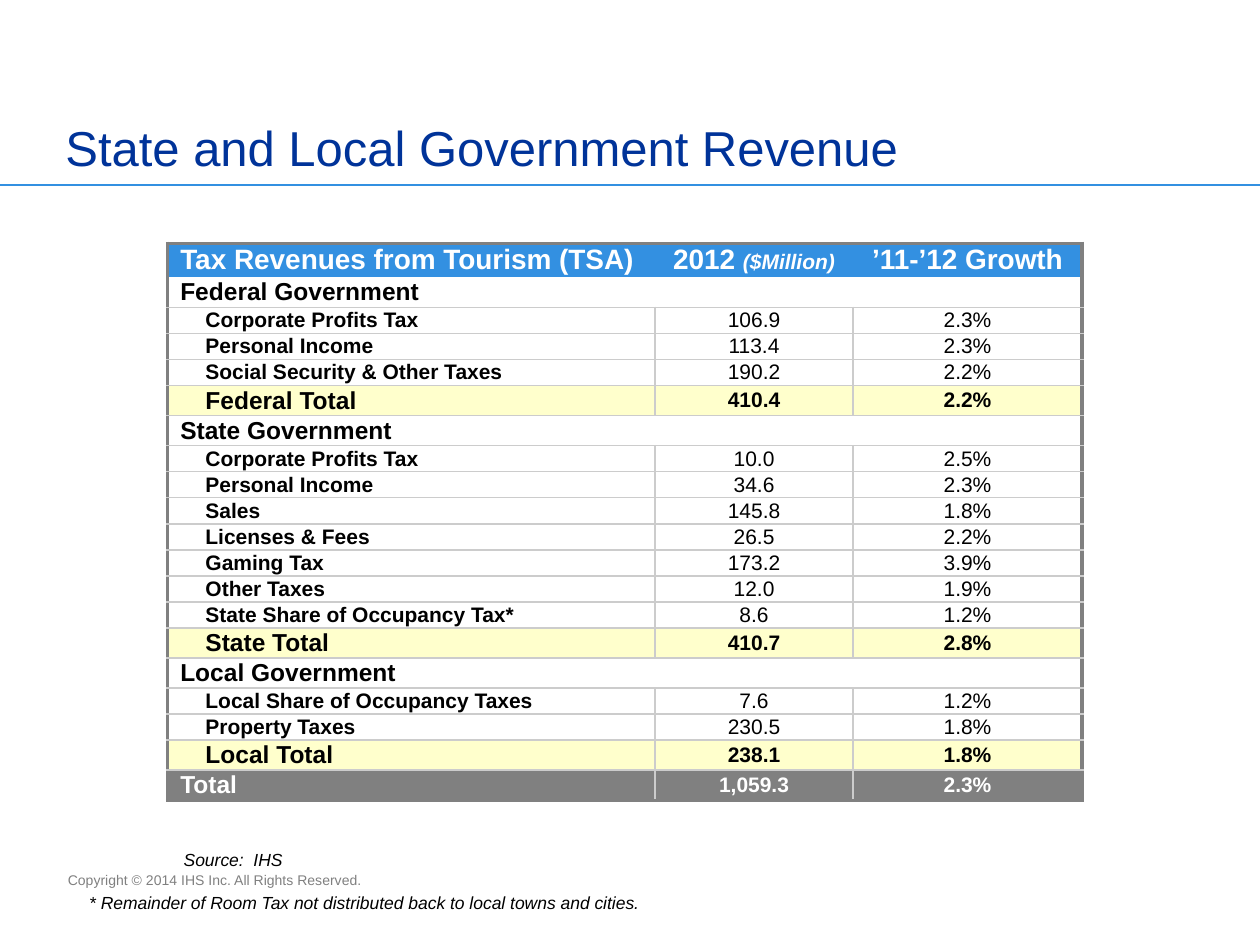
from dataclasses import dataclass

from lxml import etree
from pptx import Presentation
from pptx.dml.color import RGBColor
from pptx.enum.shapes import MSO_CONNECTOR
from pptx.enum.text import MSO_ANCHOR, MSO_AUTO_SIZE, PP_ALIGN
from pptx.oxml.ns import qn
from pptx.util import Pt

STRAIGHT = MSO_CONNECTOR.STRAIGHT
BOTTOM, MIDDLE = MSO_ANCHOR.BOTTOM, MSO_ANCHOR.MIDDLE
LEFT, CENTER = PP_ALIGN.LEFT, PP_ALIGN.CENTER
NO_FIT = MSO_AUTO_SIZE.NONE

FONT = "Arial"
TITLE_ONLY = 5
NO_TABLE_STYLE = "{2D5ABB26-0587-4C30-8999-92F81FD0307C}"
COLORS = {
    "navy": "003399", "blue": "3390E1", "gray": "808080", "light": "CCCCCC",
    "cream": "FFFFCC", "white": "FFFFFF", "black": "000000",
}


@dataclass
class RowStyle:
    height: float
    fill: str
    color: str
    label_size: float
    value_size: float
    indent: float
    bold_values: bool


@dataclass
class Row:
    kind: str
    label: str
    amount: str = ""
    growth: str = ""


@dataclass
class Note:
    text: str
    left: float
    top: float
    width: float
    height: float
    size: float
    color: str
    italic: bool


STYLES = {
    "header": RowStyle(19.5, "blue", "white", 16, 16, 7.2, True),
    "group": RowStyle(17.2, "white", "black", 14, 12, 7.2, False),
    "item": RowStyle(14.9, "white", "black", 12, 12, 21.6, False),
    "subtotal": RowStyle(17.2, "cream", "black", 14, 12, 21.6, True),
    "total": RowStyle(17.2, "gray", "white", 14, 12, 7.2, True),
}

ROWS = [
    Row("header", "Tax Revenues from Tourism (TSA)", "2012 ", "’11-’12 Growth"),
    Row("group", "Federal Government"),
    Row("item", "Corporate Profits Tax", "106.9", "2.3%"),
    Row("item", "Personal Income", "113.4", "2.3%"),
    Row("item", "Social Security & Other Taxes", "190.2", "2.2%"),
    Row("subtotal", "Federal Total", "410.4", "2.2%"),
    Row("group", "State Government"),
    Row("item", "Corporate Profits Tax", "10.0", "2.5%"),
    Row("item", "Personal Income", "34.6", "2.3%"),
    Row("item", "Sales", "145.8", "1.8%"),
    Row("item", "Licenses & Fees", "26.5", "2.2%"),
    Row("item", "Gaming Tax", "173.2", "3.9%"),
    Row("item", "Other Taxes", "12.0", "1.9%"),
    Row("item", "State Share of Occupancy Tax*", "8.6", "1.2%"),
    Row("subtotal", "State Total", "410.7", "2.8%"),
    Row("group", "Local Government"),
    Row("item", "Local Share of Occupancy Taxes", "7.6", "1.2%"),
    Row("item", "Property Taxes", "230.5", "1.8%"),
    Row("subtotal", "Local Total", "238.1", "1.8%"),
    Row("total", "Total", "1,059.3", "2.3%"),
]
COLUMN_WIDTHS = [278.6, 113, 131]

NOTES = [
    Note("Copyright © 2014 IHS Inc. All Rights Reserved.",
         31.7, 494.6, 257, 16.6, 8, "gray", False),
    Note("* Remainder of Room Tax not distributed back to local towns and cities.",
         43.9, 506.2, 329, 19.4, 10, "black", True),
    Note("Source:  IHS", 97.9, 481.7, 74.2, 19.4, 10, "black", True),
]


def rgb(name: str) -> RGBColor:
    return RGBColor.from_string(COLORS[name])


def set_attrs(obj, values: dict) -> None:
    for name, value in values.items():
        setattr(obj, name, value)


def add_run(p, text: str, size: float, color: str, bold=False, italic=False) -> None:
    r = p.add_run()
    r.text = text
    set_attrs(r.font, {"name": FONT, "size": Pt(size), "bold": bold, "italic": italic})
    r.font.color.rgb = rgb(color)


def add_title(slide, text: str) -> None:
    sp = slide.shapes.title
    set_attrs(sp, {"left": Pt(30.2), "top": Pt(15.1), "width": Pt(592.6), "height": Pt(89.3)})
    set_attrs(sp.text_frame, {"vertical_anchor": BOTTOM, "auto_size": NO_FIT})
    p = sp.text_frame.paragraphs[0]
    p.alignment = LEFT
    add_run(p, text, 28, "navy")


def add_rule(slide, y: float, width: float) -> None:
    line = slide.shapes.add_connector(STRAIGHT, Pt(0), Pt(y), Pt(width), Pt(y))
    line.line.color.rgb = rgb("blue")
    line.line.width = Pt(1)
    etree.SubElement(line._element.spPr, qn("a:effectLst"))


def add_note(slide, note: Note) -> None:
    sp = slide.shapes.add_textbox(Pt(note.left), Pt(note.top), Pt(note.width), Pt(note.height))
    sp.text_frame.word_wrap = False
    add_run(sp.text_frame.paragraphs[0], note.text, note.size, note.color, italic=note.italic)


def set_borders(cell, row: int, col: int) -> None:
    """Gray outer frame, light inner grid, no inner lines in or under the header."""
    kind = ROWS[row].kind
    last_row, last_col = len(ROWS) - 1, len(COLUMN_WIDTHS) - 1
    inner = None if kind in ("header", "group") else "light"
    ends_right = col == last_col or kind == "group"
    edges = {
        "a:lnL": "gray" if col == 0 else inner,
        "a:lnR": "gray" if ends_right else inner,
        "a:lnT": "gray" if row == 0 else None if row == 1 else "light",
        "a:lnB": "gray" if row == last_row else None if row == 0 else "light",
    }
    tc_pr = cell._tc.get_or_add_tcPr()
    for tag, color in edges.items():
        width = Pt(2.25) if color == "gray" else Pt(1)
        ln = etree.SubElement(tc_pr, qn(tag), w=str(width))
        if color is None:
            etree.SubElement(ln, qn("a:noFill"))
        else:
            fill = etree.SubElement(ln, qn("a:solidFill"))
            etree.SubElement(fill, qn("a:srgbClr"), val=COLORS[color])


def fill_cell(cell, text: str, style: RowStyle, is_label: bool, padded: bool) -> None:
    side, edge = (Pt(7.2), Pt(0.54)) if padded else (Pt(0), Pt(0))
    set_attrs(cell, {
        "vertical_anchor": MIDDLE,
        "margin_left": Pt(style.indent) if is_label else side,
        "margin_right": side, "margin_top": edge, "margin_bottom": edge,
    })
    cell.fill.solid()
    cell.fill.fore_color.rgb = rgb(style.fill)
    p = cell.text_frame.paragraphs[0]
    p.alignment = LEFT if is_label else CENTER
    if text:
        size = style.label_size if is_label else style.value_size
        add_run(p, text, size, style.color, bold=is_label or style.bold_values)


def add_revenue_table(slide) -> None:
    heights = [STYLES[row.kind].height for row in ROWS]
    frame = slide.shapes.add_table(len(ROWS), len(COLUMN_WIDTHS), Pt(95.8), Pt(139),
                                   Pt(sum(COLUMN_WIDTHS)), Pt(sum(heights)))
    table = frame.table
    table._tbl.tblPr.find(qn("a:tableStyleId")).text = NO_TABLE_STYLE
    set_attrs(table, {"first_row": False, "horz_banding": False})
    for column, width in zip(table.columns, COLUMN_WIDTHS):
        column.width = Pt(width)
    for i, row in enumerate(ROWS):
        table.rows[i].height = Pt(heights[i])
        for j, text in enumerate((row.label, row.amount, row.growth)):
            cell = table.cell(i, j)
            set_borders(cell, i, j)
            fill_cell(cell, text, STYLES[row.kind], j == 0, j == 0 or row.kind == "header")
        if row.kind == "group":
            table.cell(i, 0).merge(table.cell(i, len(COLUMN_WIDTHS) - 1))
    unit = table.cell(0, 1).text_frame.paragraphs[0]
    add_run(unit, "($Million)", 12, "white", bold=True, italic=True)


def main() -> None:
    prs = Presentation()
    set_attrs(prs, {"slide_width": Pt(720), "slide_height": Pt(540)})
    slide = prs.slides.add_slide(prs.slide_layouts[TITLE_ONLY])
    add_rule(slide, 105.8, 720)
    add_title(slide, "State and Local Government Revenue")
    add_revenue_table(slide)
    for note in NOTES:
        add_note(slide, note)
    prs.save("out.pptx")


if __name__ == "__main__":
    main()
